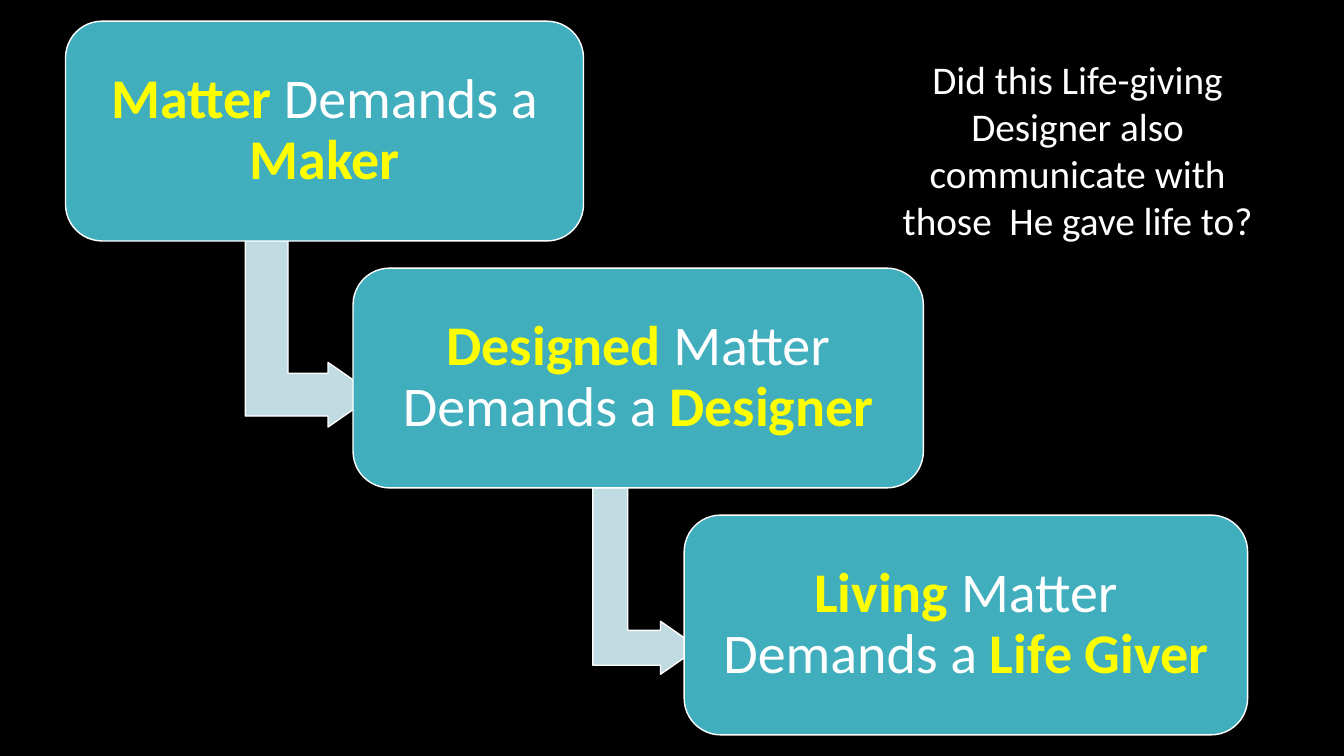
from pptx import Presentation
from pptx import util as u
from pptx.dml.color import RGBColor
from pptx.enum import shapes, text

Pt = u.Pt
WHITE, YELLOW, TEAL, PALE = "FFFFFF", "FFFF00", "41AEBD", "C0DBE1"
BOX_TOP, BOX_HEIGHT, BOX_STEP = 15.1, 157, 176.4
ARROW_LENGTH = 133.2

# Box left and width, arrow centre (x, y) and breadth, text before and after the middle
steps = [
    (46.8, 370, (221.4, 238.4, 92.2), "Matter", " Demands a ", "Maker"),
    (252.2, 407.4, (461.2, 415, 75.6), "Designed", " Matter Demands a ", "Designer"),
    (488.7, 402.5, None, "Living", " Matter Demands a ", "Life Giver"),
]


def paint(shape, fill):
    shape.shadow.inherit = False
    shape.fill.solid()
    shape.fill.fore_color.rgb = RGBColor.from_string(fill)
    shape.line.color.rgb = RGBColor.from_string(WHITE)
    shape.line.width = Pt(1)


def add_run(paragraph, words, color, size, bold=False):
    run = paragraph.add_run()
    run.text = words
    for name, value in {"name": "Calibri", "size": Pt(size), "bold": bold}.items():
        setattr(run.font, name, value)
    run.font.color.rgb = RGBColor.from_string(color)


prs = Presentation()
prs.slide_width, prs.slide_height = Pt(960), Pt(540)
slide = prs.slides.add_slide(prs.slide_layouts[6])
slide.background.fill.solid()
slide.background.fill.fore_color.rgb = RGBColor.from_string("000000")

for row, (left, width, bend, subject, link, source) in enumerate(steps):
    if bend:
        x, y, breadth = bend
        arrow = slide.shapes.add_shape(
            shapes.MSO_SHAPE.BENT_UP_ARROW,
            Pt(x - ARROW_LENGTH / 2), Pt(y - breadth / 2), Pt(ARROW_LENGTH), Pt(breadth))
        arrow.rotation = 90
        for index, value in enumerate((0.33, 0.25, 0.36)):
            arrow.adjustments[index] = value
        paint(arrow, PALE)

    box = slide.shapes.add_shape(
        shapes.MSO_SHAPE.ROUNDED_RECTANGLE,
        Pt(left), Pt(BOX_TOP + row * BOX_STEP), Pt(width), Pt(BOX_HEIGHT))
    paint(box, TEAL)
    frame = box.text_frame
    frame.word_wrap = True
    frame.vertical_anchor = text.MSO_ANCHOR.MIDDLE
    for side in ("left", "right", "top", "bottom"):
        setattr(frame, f"margin_{side}", Pt(12))
    claim = frame.paragraphs[0]
    claim.alignment = text.PP_ALIGN.CENTER
    claim.line_spacing = 0.9
    add_run(claim, subject, YELLOW, 40, True)
    add_run(claim, link, WHITE, 40)
    add_run(claim, source, YELLOW, 40, True)

question_box = slide.shapes.add_textbox(Pt(625.7), Pt(36), Pt(288), Pt(143.3))
question_box.text_frame.word_wrap = True
question = question_box.text_frame.paragraphs[0]
question.alignment = text.PP_ALIGN.CENTER
add_run(question, "Did this Life-giving Designer also communicate with those  He gave life to?",
        WHITE, 28)

prs.save("out.pptx")
